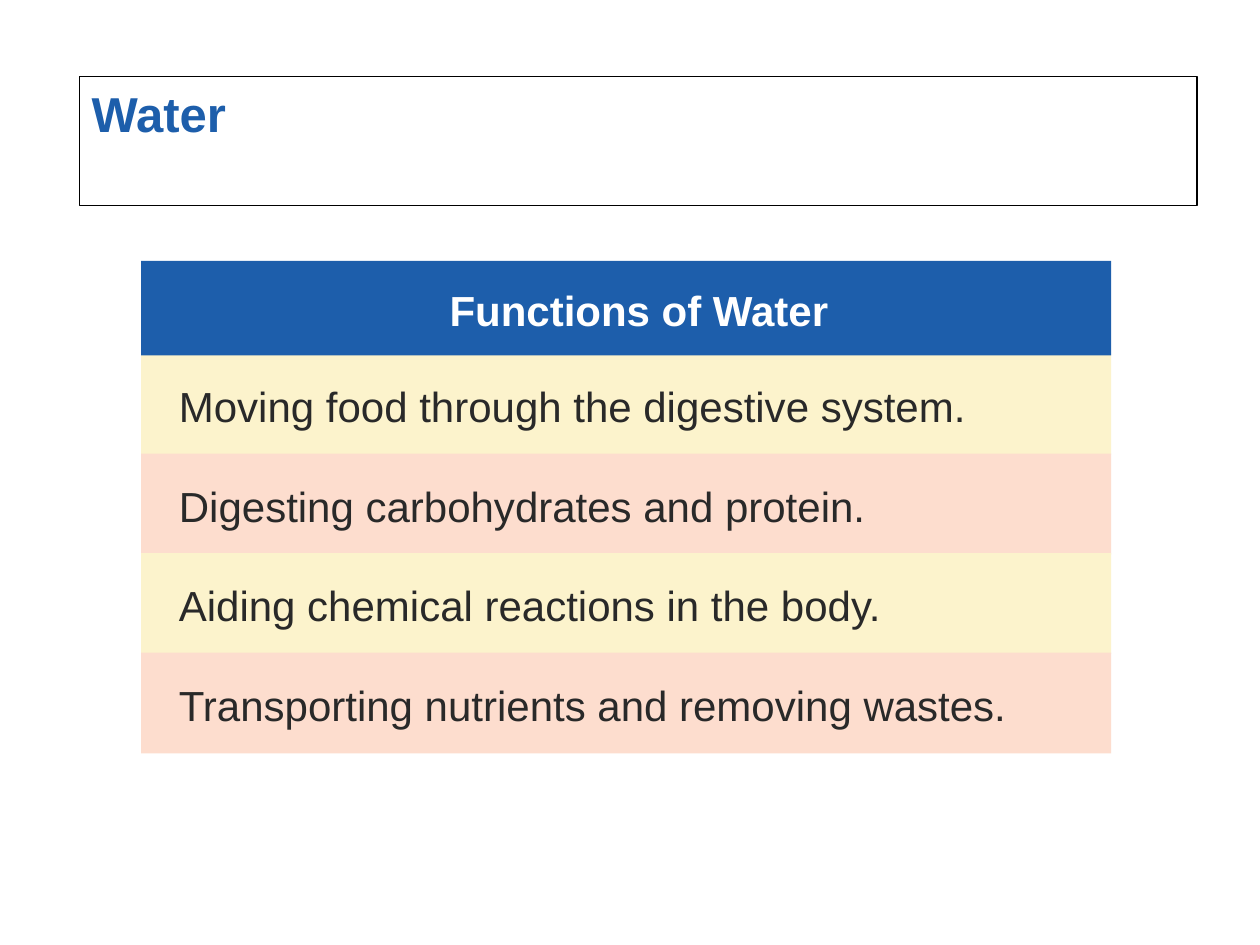
from pptx import Presentation
from pptx.dml.color import RGBColor
from pptx.enum.shapes import MSO_SHAPE
from pptx.enum.text import MSO_ANCHOR, PP_ALIGN
from pptx.util import Inches, Pt

RECT = MSO_SHAPE.RECTANGLE
TOP, MIDDLE = MSO_ANCHOR.TOP, MSO_ANCHOR.MIDDLE
LEFT, CENTER = PP_ALIGN.LEFT, PP_ALIGN.CENTER

BLUE = RGBColor(0x1D, 0x5E, 0xAB)
CREAM = RGBColor(0xFC, 0xF3, 0xCC)
PEACH = RGBColor(0xFD, 0xDD, 0xCE)
DARK = RGBColor(0x29, 0x29, 0x29)
WHITE = RGBColor(0xFF, 0xFF, 0xFF)
BLACK = RGBColor(0x00, 0x00, 0x00)

FACTS = [
    "Moving food through the digestive system.",
    "Digesting carbohydrates and protein.",
    "Aiding chemical reactions in the body.",
    "Transporting nutrients and removing wastes.",
]
BAND_X, BAND_W = 1.12, 7.7
FACT_Y, FACT_H, STEP = 2.81, 0.8, 0.79


class Page:
    """Holds the text style and the slide being filled."""

    font = "Arial"

    def __init__(self, slide):
        self.slide = slide

    def box(self, x, y, w, h, fill, inset=0.1, anchor=MIDDLE):
        shape = self.slide.shapes.add_shape(
            RECT, Inches(x), Inches(y), Inches(w), Inches(h))
        shape.shadow.inherit = False
        shape.fill.solid()
        shape.fill.fore_color.rgb = fill
        shape.line.fill.background()
        frame = shape.text_frame
        frame.word_wrap = True
        frame.vertical_anchor = anchor
        frame.margin_left = Inches(inset)
        return shape

    def text(self, shape, words, size, color, bold=False, align=LEFT, space=1.0):
        para = shape.text_frame.paragraphs[0]
        para.alignment = align
        para.line_spacing = space
        run = para.add_run()
        run.text = words
        run.font.name = self.font
        run.font.size = Pt(size)
        run.font.bold = bold
        run.font.color.rgb = color

    def title(self, words):
        shape = self.box(0.63, 0.61, 8.87, 1.02, WHITE, anchor=TOP)
        shape.line.color.rgb = BLACK
        shape.line.width = Pt(0.75)
        self.text(shape, words, 28, BLUE, bold=True)

    def band(self, y, h, fill, words, color, **style):
        shape = self.box(BAND_X, y, BAND_W, h, fill, inset=0.3)
        self.text(shape, words, 24, color, space=1.05, **style)


def main():
    deck = Presentation()
    deck.slide_width, deck.slide_height = Inches(10), Inches(7.5)
    page = Page(deck.slides.add_slide(deck.slide_layouts[6]))

    page.title("Water")
    for i, fact in enumerate(FACTS):
        fill = PEACH if i % 2 else CREAM
        page.band(FACT_Y + i * STEP, FACT_H, fill, fact, DARK)
    page.band(2.07, 0.75, BLUE, "Functions of Water", WHITE,
              bold=True, align=CENTER)

    deck.save("out.pptx")


if __name__ == "__main__":
    main()
